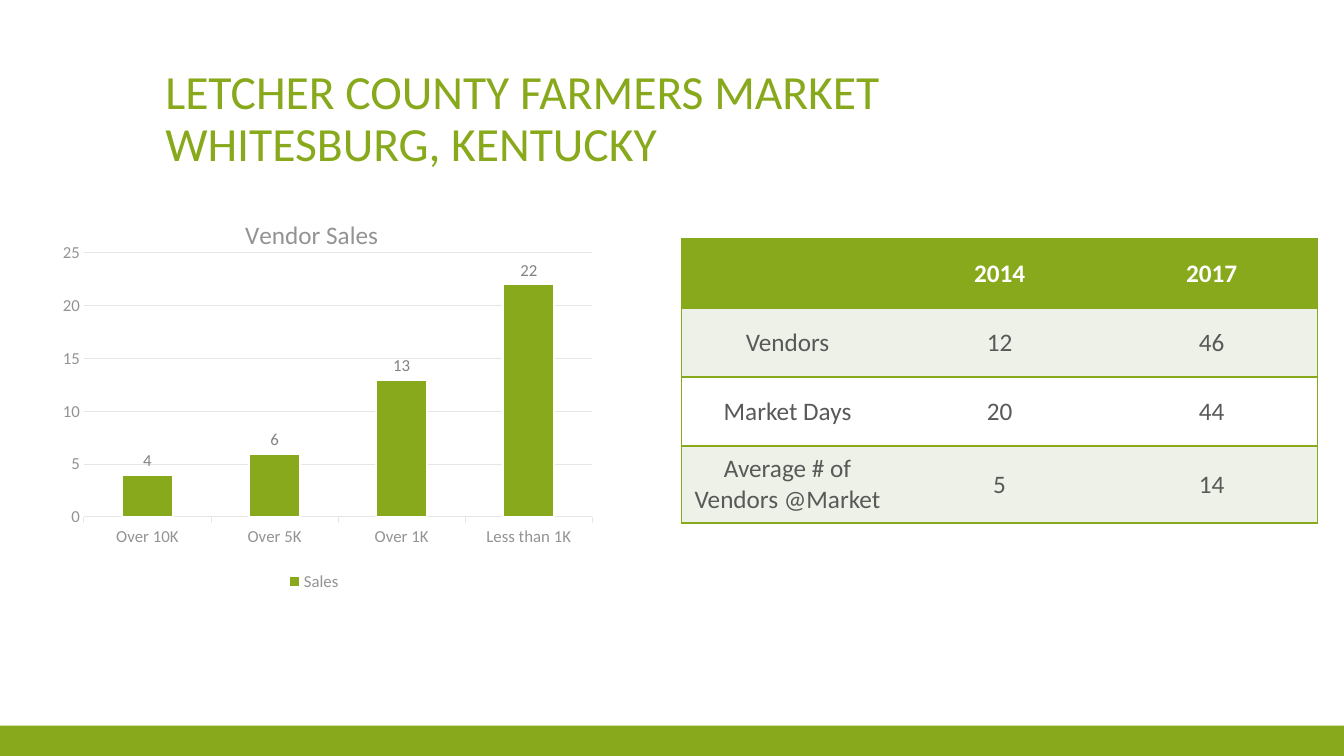
"""Build the farmers market slide with its sales chart and growth table."""
from dataclasses import dataclass

from lxml.etree import SubElement
from pptx import Presentation
from pptx.chart.data import CategoryChartData
from pptx.dml.color import RGBColor
from pptx.enum.chart import XL_CHART_TYPE, XL_LABEL_POSITION, XL_LEGEND_POSITION, XL_TICK_MARK
from pptx.enum.shapes import MSO_SHAPE
from pptx.enum.text import MSO_ANCHOR, MSO_AUTO_SIZE, PP_ALIGN
from pptx.oxml import parse_xml
from pptx.oxml.ns import nsdecls, qn
from pptx.util import Inches, Pt

WIDTH, HEIGHT = Inches(13.33), Inches(7.5)


@dataclass(frozen=True)
class Theme:
    """Colours, font and type sizes of the slide."""
    green: str = "87A91B"
    band: str = "EDF1E8"
    white: str = "FFFFFF"
    ink: str = "595959"
    axis: str = "939393"
    label: str = "828282"
    grid: str = "E6E6E6"
    font: str = "Calibri"
    title_size: int = 34
    body_size: int = 18
    chart_size: int = 12


THEME = Theme()
SALES = {"Over 10K": 4, "Over 5K": 6, "Over 1K": 13, "Less than 1K": 22}
GROWTH = [
    ("", "2014", "2017"),
    ("Vendors", "12", "46"),
    ("Market Days", "20", "44"),
    ("Average # of Vendors @Market", "5", "14"),
]


def box(left, top, width, height):
    """Turn shares of the slide's size into a left, top, width, height tuple."""
    return int(WIDTH * left), int(HEIGHT * top), int(WIDTH * width), int(HEIGHT * height)


def style_font(font, size, color, bold=False):
    """Apply the theme font with a size and colour."""
    font.name, font.size, font.bold = THEME.font, Pt(size), bold
    font.color.rgb = RGBColor.from_string(color)


def style_line(line, color, width):
    """Colour a line and set its width in points."""
    line.color.rgb = RGBColor.from_string(color)
    line.width = Pt(width)


def add_footer_band(slide):
    """Draw the green band along the bottom edge."""
    band = slide.shapes.add_shape(MSO_SHAPE.RECTANGLE, *box(0, 0.96, 1, 0.04))
    band.shadow.inherit = False
    band.fill.solid()
    band.fill.fore_color.rgb = RGBColor.from_string(THEME.green)
    band.line.fill.background()


def set_title(slide, text):
    """Place and format the title placeholder."""
    title = slide.shapes.title
    title.left, title.top, title.width, title.height = box(0.1155, 0.0667, 0.76, 0.1667)
    frame = title.text_frame
    frame.text = text
    frame.word_wrap = True
    frame.auto_size = MSO_AUTO_SIZE.NONE
    frame.vertical_anchor = MSO_ANCHOR.BOTTOM
    heading = frame.paragraphs[0]
    heading.alignment = PP_ALIGN.LEFT
    heading.line_spacing = 0.9
    style_font(heading.font, THEME.title_size, THEME.green)


def set_layout(element, **shares):
    """Fix a chart part's position by shares of the chart's size."""
    for old in element.findall(qn("c:layout")):
        element.remove(old)
    layout = parse_xml(f"<c:layout {nsdecls('c')}><c:manualLayout/></c:layout>")
    for tag, value in shares.items():
        SubElement(layout[0], qn(f"c:{tag}"), val=str(value))
    text = element.find(qn("c:tx"))
    element.insert(0 if text is None else 1, layout)


def style_axis(axis, tick):
    """Format an axis's labels and tick marks."""
    style_font(axis.tick_labels.font, THEME.chart_size, THEME.axis)
    axis.major_tick_mark = tick
    axis.minor_tick_mark = XL_TICK_MARK.NONE


def add_sales_chart(slide):
    """Add the column chart of vendor sales."""
    data = CategoryChartData()
    data.categories = list(SALES)
    data.add_series("Sales", list(SALES.values()))
    chart = slide.shapes.add_chart(
        XL_CHART_TYPE.COLUMN_CLUSTERED, *box(0.0233, 0.2547, 0.4209, 0.5333), data).chart
    style_font(chart.font, THEME.chart_size, THEME.ink)

    chart.has_title = True
    chart.chart_title.include_in_layout = False
    heading = chart.chart_title.text_frame
    heading.text = "Vendor Sales"
    style_font(heading.paragraphs[0].font, THEME.body_size, THEME.axis)
    set_layout(heading._txBody.getparent().getparent().getparent().find(qn("c:title")),
               xMode="edge", yMode="edge", x=0.37, y=0.05)
    set_layout(chart._chartSpace.chart.plotArea, layoutTarget="inner",
               xMode="edge", yMode="edge", x=0.093, y=0.149, w=0.899, h=0.656)

    chart.has_legend = True
    chart.legend.position = XL_LEGEND_POSITION.BOTTOM
    chart.legend.include_in_layout = False
    style_font(chart.legend.font, THEME.chart_size, THEME.axis)

    ranges, amounts = chart.category_axis, chart.value_axis
    style_axis(ranges, XL_TICK_MARK.OUTSIDE)
    style_line(ranges.format.line, THEME.grid, 0.75)
    style_axis(amounts, XL_TICK_MARK.NONE)
    amounts.format.line.fill.background()
    amounts.minimum_scale, amounts.maximum_scale, amounts.major_unit = 0, 25, 5
    style_line(amounts.major_gridlines.format.line, THEME.grid, 0.75)

    plot = chart.plots[0]
    plot.gap_width, plot.vary_by_categories = 150, False
    plot.has_data_labels = True
    plot.data_labels.show_value = True
    plot.data_labels.position = XL_LABEL_POSITION.OUTSIDE_END
    style_font(plot.data_labels.font, THEME.chart_size, THEME.label)
    sales = plot.series[0]
    sales.format.fill.solid()
    sales.format.fill.fore_color.rgb = RGBColor.from_string(THEME.green)
    style_line(sales.format.line, THEME.white, 1.5)


def set_borders(cell, sides):
    """Draw green borders on the given sides and clear the others."""
    properties = cell._tc.get_or_add_tcPr()
    for place, side in enumerate("LRTB"):
        paint = (f'<a:solidFill><a:srgbClr val="{THEME.green}"/></a:solidFill>'
                 if side in sides else "<a:noFill/>")
        properties.insert(place, parse_xml(
            f'<a:ln{side} {nsdecls("a")} w="{Pt(1)}">{paint}</a:ln{side}>'))


def fill_cell(cell, text, fill, color, bold):
    """Write centred text into a filled cell."""
    cell.fill.solid()
    cell.fill.fore_color.rgb = RGBColor.from_string(fill)
    cell.vertical_anchor = MSO_ANCHOR.MIDDLE
    cell.text = text
    entry = cell.text_frame.paragraphs[0]
    entry.alignment = PP_ALIGN.CENTER
    style_font(entry.font, THEME.body_size, color, bold)


def add_growth_table(slide):
    """Add the table comparing 2014 with 2017."""
    last = len(GROWTH[0]) - 1
    table = slide.shapes.add_table(
        len(GROWTH), last + 1, *box(0.5071, 0.316, 0.4734, 0.3747)).table
    for row, height in zip(table.rows, (0.685, 0.685, 0.685, 0.765)):
        row.height = Inches(height)
    for r, entries in enumerate(GROWTH):
        header = r == 0
        fill = THEME.green if header else (THEME.white, THEME.band)[r % 2]
        color = THEME.white if header else THEME.ink
        for c, text in enumerate(entries):
            cell = table.cell(r, c)
            fill_cell(cell, text, fill, color, header)
            set_borders(cell, "TB" + "L" * (c == 0) + "R" * (c == last))


def main():
    """Build and save the slide."""
    deck = Presentation()
    deck.slide_width, deck.slide_height = WIDTH, HEIGHT
    slide = deck.slides.add_slide(deck.slide_layouts[5])
    add_footer_band(slide)
    set_title(slide, "LETCHER COUNTY FARMERS MARKET\vWHITESBURG, KENTUCKY")
    add_growth_table(slide)
    add_sales_chart(slide)
    deck.save("out.pptx")


if __name__ == "__main__":
    main()
